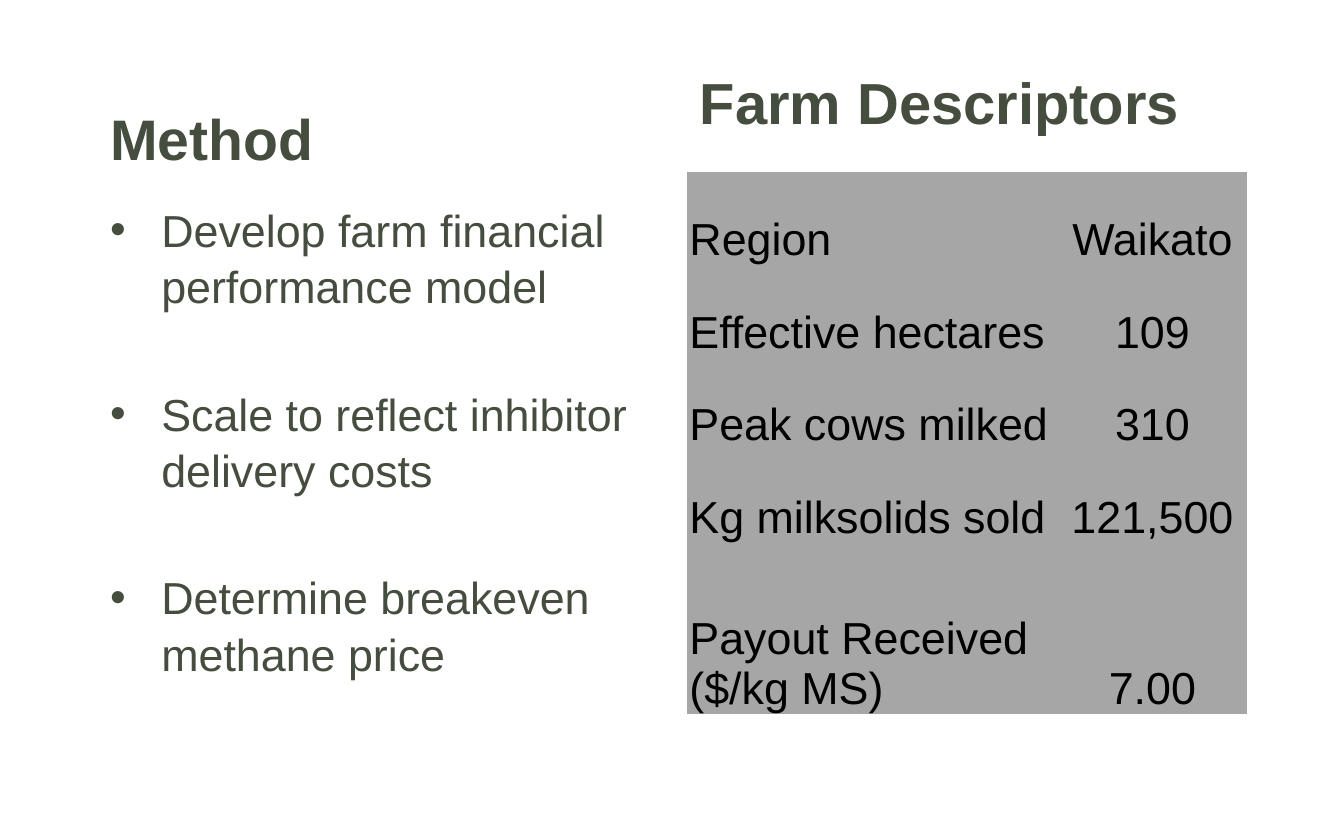
from pptx import Presentation
from pptx.dml.color import RGBColor as RGB
from pptx.enum.text import MSO_ANCHOR as Anchor, MSO_AUTO_SIZE as AutoSize, PP_ALIGN as Align
from pptx.util import Inches, Pt

COLORS = {"heading": "444D3E", "cell": "A6A6A6", "ink": "000000"}
FONT = "Arial"
WIDTH, HEIGHT = 10, 6.25
LEFT, RIGHT, COLUMN = 0.072, 0.511, 0.417  # two columns, as shares of the width
NO_STYLE = "{2D5ABB26-0587-4C30-8999-92F81FD0307C}"

STEPS = [
    "Develop farm financial performance model",
    "Scale to reflect inhibitor delivery costs",
    "Determine breakeven methane price",
]
FARM = [
    ("Region", "Waikato"),
    ("Effective hectares", "109"),
    ("Peak cows milked", "310"),
    ("Kg milksolids sold", "121,500"),
    ("Payout Received ($/kg MS)", "7.00"),
]


class Deck:
    def __init__(self):
        self.prs = Presentation()
        self.prs.slide_width, self.prs.slide_height = Inches(WIDTH), Inches(HEIGHT)
        self.s = self.prs.slides.add_slide(self.prs.slide_layouts[1])

    def box(self, x, y, w, h):
        """Turn shares of the slide into lengths."""
        return Inches(x * WIDTH), Inches(y * HEIGHT), Inches(w * WIDTH), Inches(h * HEIGHT)

    def place(self, sp, *shares):
        sp.left, sp.top, sp.width, sp.height = self.box(*shares)

    def run(self, p, text, size, color, bold=False):
        r = p.add_run()
        r.text = text
        r.font.name, r.font.size, r.font.bold = FONT, Pt(size), bold
        r.font.color.rgb = RGB.from_string(COLORS[color])

    def heading(self, sp, text, size, anchor):
        tf = sp.text_frame
        tf.word_wrap, tf.auto_size, tf.vertical_anchor = True, AutoSize.NONE, anchor
        p = tf.paragraphs[0]
        p.alignment, p.line_spacing = Align.LEFT, 0.9
        self.run(p, text, size, "heading", bold=True)
        return tf

    def title(self, text, *shares):
        sp = self.s.shapes.title
        self.place(sp, *shares)
        tf = self.heading(sp, text, 30.6, Anchor.BOTTOM)
        tf.margin_top, tf.margin_bottom = 0, Inches(0.08)

    def subheading(self, text, *shares):
        sp = self.s.shapes.add_textbox(*self.box(*shares))
        self.heading(sp, text, 31, Anchor.MIDDLE)

    def bullets(self, items, *shares):
        sp = self.s.placeholders[1]
        self.place(sp, *shares)
        tf = sp.text_frame
        tf.word_wrap, tf.auto_size = True, AutoSize.NONE
        for i, item in enumerate(items):
            p = tf.add_paragraph() if i else tf.paragraphs[0]
            pPr = p._p.get_or_add_pPr()
            pPr.set("marL", str(Inches(0.38)))
            pPr.set("indent", str(-Inches(0.38)))
            p.line_spacing, p.space_before = 1.05, Pt(38 if i else 0)
            self.run(p, item, 24, "heading")

    def table(self, rows, widths, heights, *shares):
        frame = self.s.shapes.add_table(len(rows), len(widths), *self.box(*shares))
        table = frame.table
        table.first_row = table.horz_banding = False
        table._tbl.tblPr[0].text = NO_STYLE
        for col, width in zip(table.columns, widths):
            col.width = Inches(width)
        for row, height, texts in zip(table.rows, heights, rows):
            row.height = Inches(height)
            for cell, text, align in zip(row.cells, texts, (Align.LEFT, Align.CENTER)):
                cell.fill.solid()
                cell.fill.fore_color.rgb = RGB.from_string(COLORS["cell"])
                cell.margin_left = cell.margin_right = cell.margin_top = Inches(0.02)
                cell.margin_bottom = 0
                cell.vertical_anchor = Anchor.BOTTOM
                p = cell.text_frame.paragraphs[0]
                p.alignment = align
                self.run(p, text, 24, "ink")


def main():
    deck = Deck()
    # Left column: method
    deck.title("Method", LEFT, 0.192, 0.3, 0.026)
    deck.bullets(STEPS, LEFT, 0.23, COLUMN, 0.618)
    # Right column: farm descriptors
    deck.table(FARM, (2.76, 1.41), [0.69] * 4 + [1.27], RIGHT, 0.205, COLUMN, 0.643)
    deck.subheading("Farm Descriptors", RIGHT, 0.046, 0.474, 0.16)
    deck.prs.save("out.pptx")


if __name__ == "__main__":
    main()
